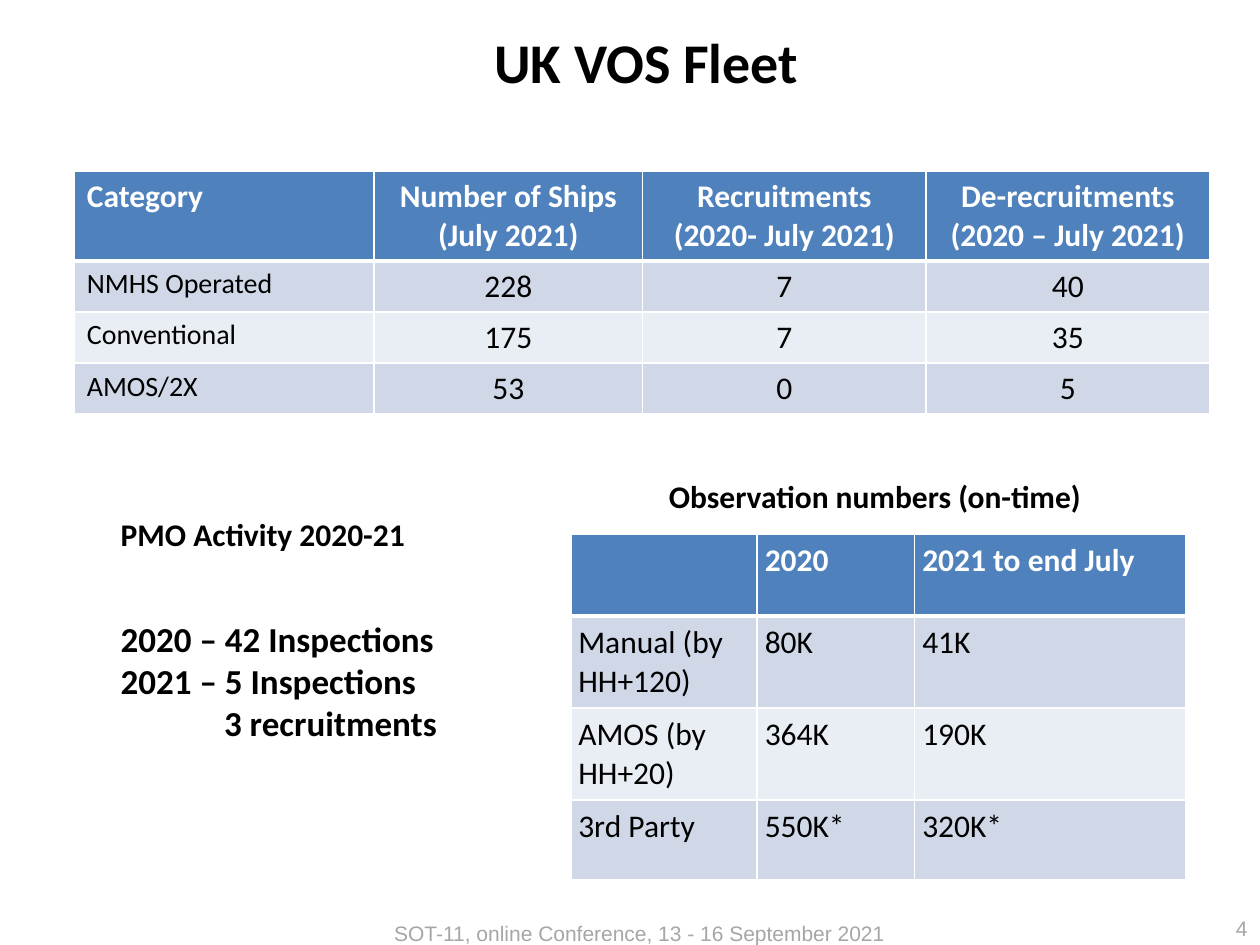
from lxml import etree
from pptx import Presentation
from pptx.dml.color import RGBColor
from pptx.enum.text import MSO_ANCHOR, PP_ALIGN
from pptx.oxml.ns import qn
from pptx.util import Inches, Pt

LEFT, MID, RIGHT = PP_ALIGN.LEFT, PP_ALIGN.CENTER, PP_ALIGN.RIGHT
TOP, CENTER = MSO_ANCHOR.TOP, MSO_ANCHOR.MIDDLE
COLS, ROWS = 100, 75
BLACK, WHITE, GREY = "000000", "FFFFFF", "A6A6A6"
HEAD, BANDS = "4F81BD", ("D0D8E8", "E9EDF4")

FLEET = [
    ["Category", "Number of Ships (July 2021)", "Recruitments (2020- July 2021)",
     "De-recruitments\n(2020 – July 2021)"],
    ["NMHS Operated", "228", "7", "40"],
    ["Conventional", "175", "7", "35"],
    ["AMOS/2X", "53", "0", "5"],
]
COUNTS = [
    ["", "2020", "2021 to end July"],
    ["Manual (by HH+120)", "80K", "41K"],
    ["AMOS (by HH+20)", "364K", "190K"],
    ["3rd Party", "550K*", "320K*"],
]


def unit(count):
    return Inches(count * 10 / COLS)


def color(value):
    return RGBColor.from_string(value)


def style(frame, size, tint=BLACK, bold=True, align=LEFT, face="Calibri"):
    for para in frame.paragraphs:
        para.alignment = align
        for run in para.runs:
            font = run.font
            font.name, font.size, font.bold = face, Pt(size), bold
            font.color.rgb = color(tint)


def place(shape, box):
    shape.left, shape.top, shape.width, shape.height = map(unit, box)


def add_text(slide, box, text, size, anchor=TOP, **look):
    frame = slide.shapes.add_textbox(*map(unit, box)).text_frame
    frame.word_wrap = True
    frame.vertical_anchor = anchor
    frame.text = text
    style(frame, size, **look)
    return frame


def add_edge(cell, side, width):
    line = etree.SubElement(cell._tc.get_or_add_tcPr(), qn(f"a:ln{side}"), w=str(Pt(width)))
    fill = etree.SubElement(line, qn("a:solidFill"))
    etree.SubElement(fill, qn("a:srgbClr"), val=WHITE)


def add_grid(slide, spot, widths, heights, data, label, align, inset=None):
    box = (*spot, sum(widths), sum(heights))
    table = slide.shapes.add_table(len(data), len(widths), *map(unit, box)).table
    for col, width in zip(table.columns, widths):
        col.width = unit(width)
    for r, (row, height) in enumerate(zip(data, heights)):
        table.rows[r].height = unit(height)
        for c, text in enumerate(row):
            cell = table.cell(r, c)
            if inset:
                cell.margin_left = cell.margin_right = unit(inset)
                cell.margin_top = cell.margin_bottom = unit(inset)
            for side in "LRTB":
                thick = (r, side) in ((0, "B"), (1, "T"))
                add_edge(cell, side, 3 if thick else 1)
            cell.fill.solid()
            cell.fill.fore_color.rgb = color(BANDS[(r - 1) % 2] if r else HEAD)
            cell.text_frame.text = text
            style(cell.text_frame, label if r and c == 0 else 18,
                  BLACK if r else WHITE, r == 0, align if c else LEFT)


def add_title(slide, box, text):
    title = slide.shapes.title
    place(title, box)
    frame = title.text_frame
    frame.text = text
    frame.vertical_anchor = TOP
    style(frame, 32, align=MID)


def main():
    deck = Presentation()
    deck.slide_width, deck.slide_height = unit(COLS), unit(ROWS)
    slide = deck.slides.add_slide(deck.slide_layouts[5])
    add_title(slide, (12.3, 1.7, 78, 9.8), "UK VOS Fleet")
    add_grid(slide, (5.9, 13.6), (23.8, 21.3, 22.5, 22.5), (7.1, 4.05, 4.05, 4.05),
             FLEET, 16, MID)
    add_grid(slide, (45.3, 42.4), (14.8, 12.5, 21.5), (6.5, 7.3, 7.3, 6.3),
             COUNTS, 18, LEFT, 0.6)
    add_text(slide, (8.6, 40.4, 30, 4), "PMO Activity 2020-21", 18)
    visits = add_text(slide, (8.6, 48.5, 33.1, 11.1),
                      "2020 – 42 Inspections\n2021 – 5 Inspections\n3 recruitments", 20)
    visits.paragraphs[2]._p.get_or_add_pPr().set("marL", str(unit(8.2)))
    add_text(slide, (52.1, 37.4, 37.2, 4), "Observation numbers (on-time)", 18)
    note = dict(tint=GREY, bold=False, face="Arial")
    add_text(slide, (30.3, 72.6, 48.8, 3),
             "SOT-11, online Conference, 13 - 16 September 2021", 12, **note)
    add_text(slide, (77.5, 72.4, 22.5, 2.5), "4", 12, CENTER, align=RIGHT, **note)
    deck.save("out.pptx")


if __name__ == "__main__":
    main()
